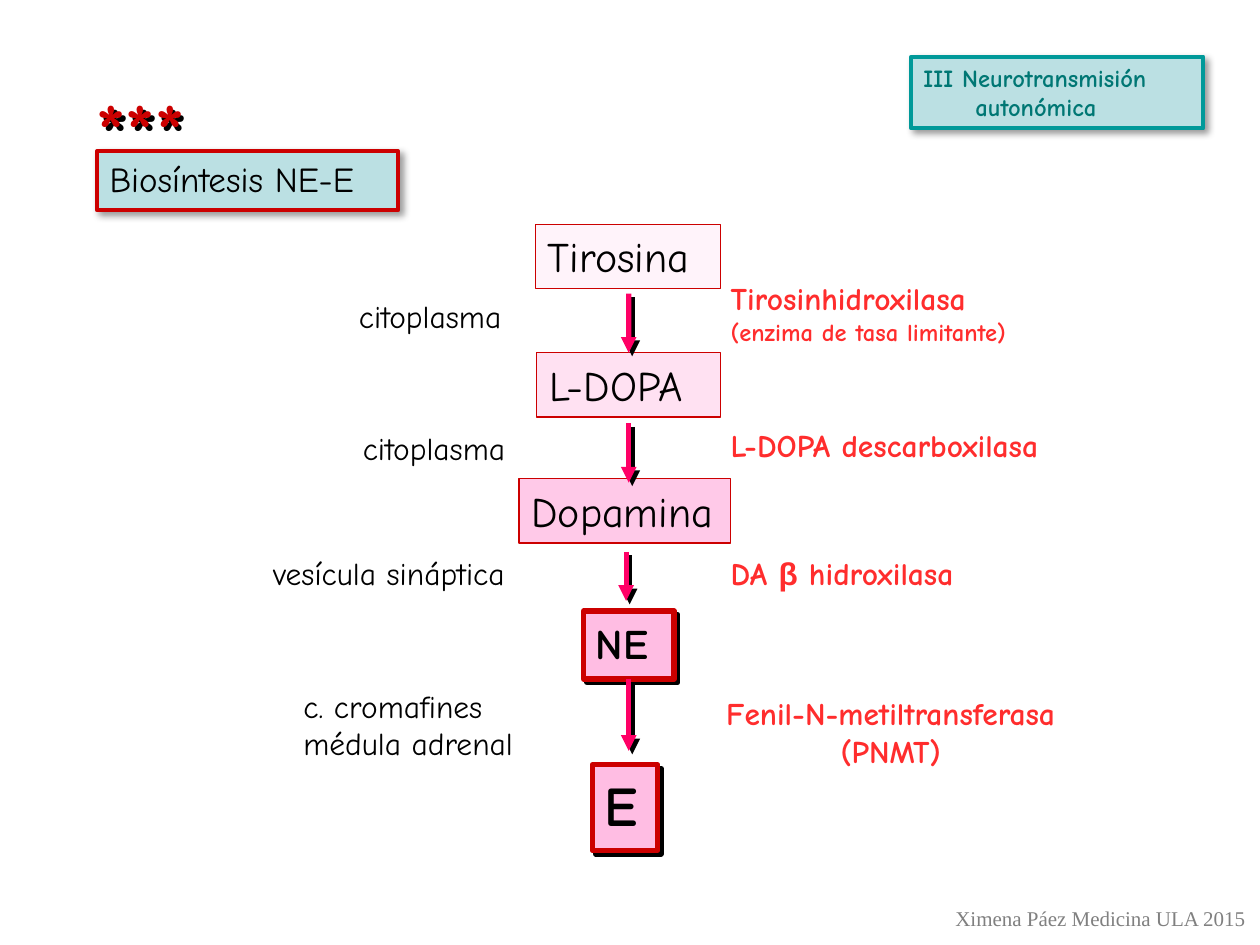
from dataclasses import dataclass

import pptx
import pptx.dml.color
import pptx.enum.shapes
import pptx.enum.text
import pptx.oxml
import pptx.oxml.ns
import pptx.util

Pt = pptx.util.Pt
ALIGN = pptx.enum.text.PP_ALIGN


@dataclass(frozen=True)
class Theme:
    font: str = "Comic Neue"
    symbol_font: str = "Arial"
    credit_font: str = "Times New Roman"
    ink: str = "000000"
    red: str = "CC0000"
    enzyme: str = "FF2D2D"
    arrow: str = "FF0066"
    panel: str = "BBE0E3"
    teal: str = "009999"
    teal_text: str = "007774"
    credit: str = "808080"
    stars_size: int = 44
    product_size: int = 32
    molecule_size: int = 24
    title_size: int = 20
    label_size: int = 18
    note_size: int = 14
    credit_size: int = 12


THEME = Theme()
# Opacity in percent, blur and distance in points
SOFT_SHADOW = (40, 4, 3)
HARD_SHADOW = (100, 0, 2.8)


def rgb(value):
    return pptx.dml.color.RGBColor.from_string(value)


def set_shadow(shape, shadow=None):
    """Give the shape a black shadow to the lower right, or none at all."""
    effects = '<a:effectLst %s/>' % pptx.oxml.ns.nsdecls("a")
    if shadow:
        opacity, blur, distance = shadow
        effects = (
            f'<a:effectLst {pptx.oxml.ns.nsdecls("a")}>'
            f'<a:outerShdw blurRad="{Pt(blur)}" dist="{Pt(distance)}" dir="2700000" '
            f'algn="tl" rotWithShape="0"><a:srgbClr val="{THEME.ink}">'
            f'<a:alpha val="{opacity * 1000}"/></a:srgbClr></a:outerShdw></a:effectLst>'
        )
    shape._element.spPr.append(pptx.oxml.parse_xml(effects))


def write_text(shape, *paragraphs, size=THEME.label_size, color=THEME.ink,
               bold=False, font=THEME.font, align=ALIGN.LEFT):
    """Write paragraphs, each a list of (text, format overrides) or plain text."""
    frame = shape.text_frame
    frame.word_wrap = True
    frame.auto_size = pptx.enum.text.MSO_AUTO_SIZE.NONE
    frame.vertical_anchor = pptx.enum.text.MSO_ANCHOR.TOP
    frame.margin_left = frame.margin_right = Pt(7.2)
    frame.margin_top = frame.margin_bottom = Pt(3.6)
    for index, runs in enumerate(paragraphs):
        paragraph = frame.paragraphs[0] if index == 0 else frame.add_paragraph()
        paragraph.alignment = align
        for text, overrides in [(runs, {})] if isinstance(runs, str) else runs:
            run = paragraph.add_run()
            run.text = text
            run.font.name = overrides.get("font", font)
            run.font.size = Pt(overrides.get("size", size))
            run.font.bold = bold
            run.font.color.rgb = rgb(color)


def style_box(shape, fill, line, width, shadow=None):
    shape.fill.solid()
    shape.fill.fore_color.rgb = rgb(fill)
    shape.line.color.rgb = rgb(line)
    shape.line.width = Pt(width)
    set_shadow(shape, shadow)


def add_box(slide, place, *paragraphs, fill, line=THEME.red, width=0.75,
            shadow=None, **text_format):
    box = slide.shapes.add_shape(
        pptx.enum.shapes.MSO_SHAPE.RECTANGLE, *map(Pt, place))
    style_box(box, fill, line, width, shadow)
    write_text(box, *paragraphs, **text_format)
    return box


def add_label(slide, place, *paragraphs, **text_format):
    label = slide.shapes.add_textbox(*map(Pt, place))
    write_text(label, *paragraphs, **text_format)
    return label


def add_title(slide):
    title = slide.shapes.title
    title.left, title.top, title.width, title.height = map(Pt, (55.4, 86.4, 172.1, 33.8))
    style_box(title, THEME.panel, THEME.red, 2.25, SOFT_SHADOW)
    write_text(title, "Biosíntesis NE-E", size=THEME.title_size)


def add_arrow(slide, x, top, bottom, source=None, target=None):
    arrow = slide.shapes.add_connector(
        pptx.enum.shapes.MSO_CONNECTOR.STRAIGHT, Pt(x), Pt(top), Pt(x), Pt(bottom))
    if source is not None:
        arrow.begin_connect(source, 2)
    if target is not None:
        arrow.end_connect(target, 0)
    arrow.line.color.rgb = rgb(THEME.arrow)
    arrow.line.width = Pt(3)
    arrow.line._get_or_add_ln().append(pptx.oxml.parse_xml(
        '<a:tailEnd %s type="triangle"/>' % pptx.oxml.ns.nsdecls("a")))
    set_shadow(arrow, HARD_SHADOW)


def add_pathway(slide):
    molecules = [
        ("Tirosina", (306, 128.2, 105.8, 36.7), "FFF3FA"),
        ("L-DOPA", (306.7, 201.6, 105.1, 36.7), "FFE1F2"),
        ("Dopamina", (296.6, 273.6, 121, 36.7), "FFC9E8"),
    ]
    products = [
        ("NE", (333.4, 349.2, 51.8, 38.9), THEME.molecule_size),
        ("E", (338.4, 437, 37.4, 49), THEME.product_size),
    ]
    boxes = {}
    for name, place, fill in molecules:
        boxes[name] = add_box(slide, place, name, fill=fill, size=THEME.molecule_size)
    for name, place, size in products:
        boxes[name] = add_box(slide, place, name, fill="FFBDE3", width=3,
                              shadow=HARD_SHADOW, size=size, bold=True)

    add_arrow(slide, 359.3, 167.8, 201.6, target=boxes["L-DOPA"])
    add_arrow(slide, 359.3, 241.9, 275.8)
    add_arrow(slide, 357.8, 315.4, 343.4)
    add_arrow(slide, 359.3, 388.1, 429.1, source=boxes["NE"])


def add_enzymes(slide):
    enzyme = dict(color=THEME.enzyme, bold=True)
    left = 410.4
    add_label(slide, (left, 156.2, 192.2, 45.4), "Tirosinhidroxilasa",
              [("(enzima de tasa limitante)", {"size": THEME.note_size})], **enzyme)
    add_label(slide, (left, 239.8, 221.8, 28.8), "L-DOPA descarboxilasa", **enzyme)
    add_label(slide, (left, 313.2, 160.6, 28.8),
              [("DA ", {}), ("β", {"font": THEME.symbol_font}), (" hidroxilasa", {})],
              **enzyme)
    add_label(slide, (390.2, 393.1, 237.6, 51.1), "Fenil-N-metiltransferasa",
              "(PNMT)", align=ALIGN.CENTER, **enzyme)


def add_sites(slide):
    """Name the place in the cell where each step happens."""
    for place, lines in [
        ((198, 166.3, 102.2, 28.8), ["citoplasma"]),
        ((200.2, 241.9, 102.2, 28.8), ["citoplasma"]),
        ((149, 313.2, 159.1, 28.8), ["vesícula sináptica"]),
        ((166.3, 388.8, 139.7, 50.4), ["c. cromafines", "médula adrenal"]),
    ]:
        add_label(slide, place, *lines)


def add_margin_notes(slide):
    stars = add_label(slide, (48.2, 43.2, 84.2, 59.8), "***",
                      size=THEME.stars_size, color=THEME.red, bold=True)
    set_shadow(stars, HARD_SHADOW)
    chapter = add_box(slide, (520.6, 32.4, 167, 41), "III Neurotransmisión",
                      "autonómica", fill=THEME.panel, line=THEME.teal, width=2.25,
                      shadow=SOFT_SHADOW, size=THEME.note_size,
                      color=THEME.teal_text, bold=True)
    second_line = chapter.text_frame.paragraphs[1]
    second_line._p.get_or_add_pPr().set("marL", str(Pt(29.7)))
    add_label(slide, (537.8, 514.1, 182.2, 21.6), "Ximena Páez Medicina ULA 2015",
              size=THEME.credit_size, color=THEME.credit, font=THEME.credit_font,
              align=ALIGN.CENTER)


def main():
    deck = pptx.Presentation()
    deck.slide_width, deck.slide_height = Pt(720), Pt(540)
    slide = deck.slides.add_slide(deck.slide_layouts.get_by_name("Title Only"))
    add_title(slide)
    add_pathway(slide)
    add_enzymes(slide)
    add_sites(slide)
    add_margin_notes(slide)
    deck.save("out.pptx")


if __name__ == "__main__":
    main()
